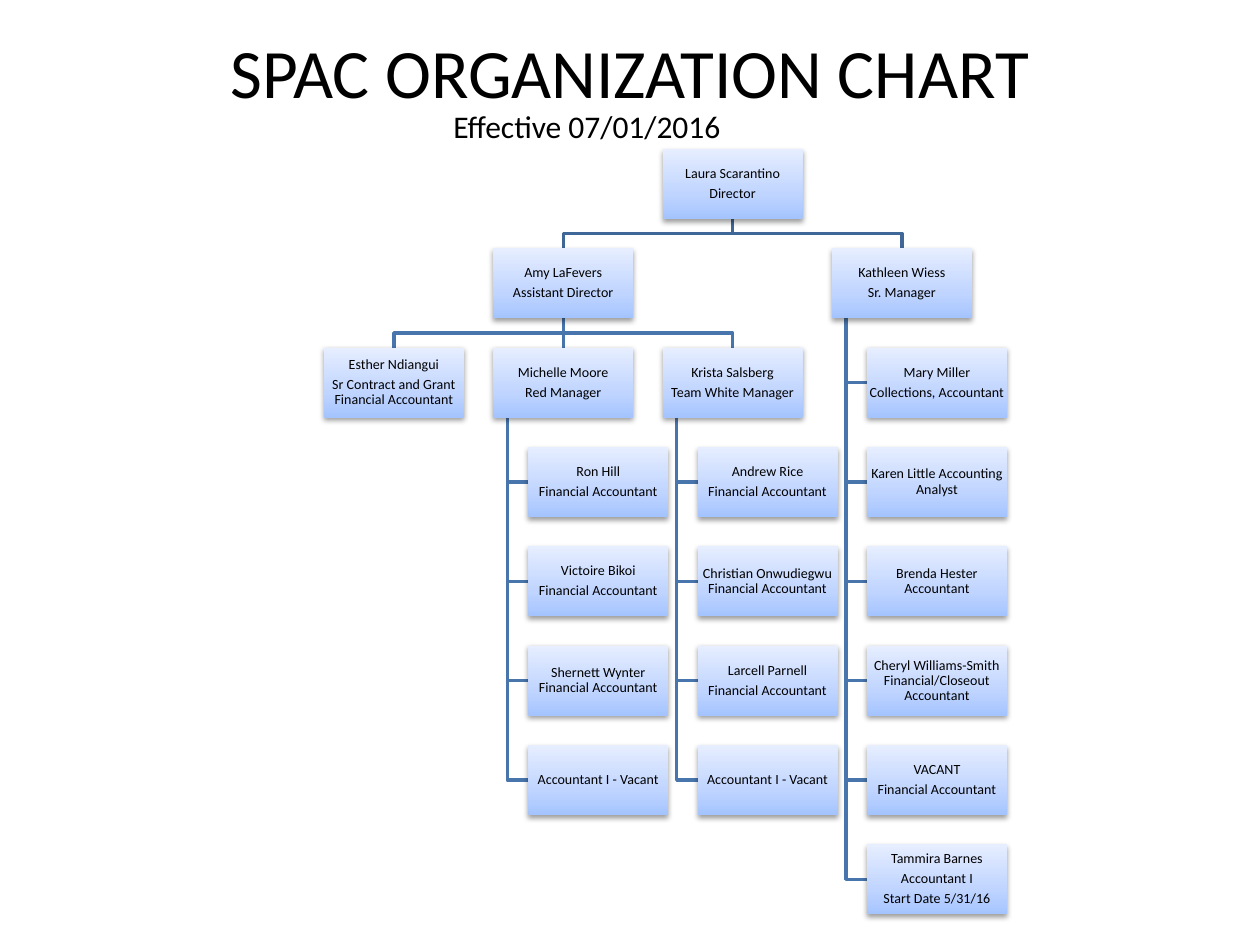
from lxml.etree import SubElement
from pptx import Presentation
from pptx.dml.color import RGBColor
from pptx.enum.shapes import MSO_SHAPE, MSO_CONNECTOR
from pptx.enum.text import MSO_ANCHOR, MSO_AUTO_SIZE, PP_ALIGN
from pptx.oxml.ns import qn
from pptx.util import Pt

PX = 914400 / 378  # EMU in one px
PAGE_W, PAGE_H = 3780, 2835
BOX_W, BOX_H = 420, 210
COLUMN_STEP, ROW_STEP = 508, 298
CHART_LEFT, CHART_TOP = 972, 447
SPINE, INDENT = BOX_W // 10, BOX_W // 4
GAP = ROW_STEP - BOX_H

FONT = "Calibri"
BLACK = RGBColor(0x00, 0x00, 0x00)
TOP_LINE = RGBColor(0x3F, 0x67, 0x97)
LINE = RGBColor(0x48, 0x75, 0xAC)
GRADIENT = [(0, RGBColor(0xA4, 0xC4, 0xFF)),
            (35, RGBColor(0xBF, 0xD4, 0xFF)),
            (100, RGBColor(0xE6, 0xEE, 0xFF))]

DIRECTOR = ["Laura Scarantino", "Director"]
ASSISTANT = ["Amy LaFevers", "Assistant Director"]
SENIOR = ["Kathleen Wiess", "Sr. Manager"]
GRANTS = ["Esther Ndiangui", "Sr Contract and Grant Financial Accountant"]
RED = ["Michelle Moore", "Red Manager"]
WHITE = ["Krista Salsberg", "Team White Manager"]
RED_STAFF = [
    ["Ron Hill", "Financial Accountant"],
    ["Victoire Bikoi", "Financial Accountant"],
    ["Shernett Wynter Financial Accountant"],
    ["Accountant I - Vacant"],
]
WHITE_STAFF = [
    ["Andrew Rice", "Financial Accountant"],
    ["Christian Onwudiegwu Financial Accountant"],
    ["Larcell Parnell", "Financial Accountant"],
    ["Accountant I - Vacant"],
]
SENIOR_STAFF = [
    ["Mary Miller", "Collections, Accountant"],
    ["Karen Little Accounting Analyst"],
    ["Brenda Hester Accountant"],
    ["Cheryl Williams-Smith Financial/Closeout Accountant"],
    ["VACANT", "Financial Accountant"],
    ["Tammira Barnes", "Accountant I", "Start Date 5/31/16"],
]


def emu(*lengths):
    return [round(length * PX) for length in lengths]


def place(shape, *box):
    shape.left, shape.top, shape.width, shape.height = emu(*box)


def style(para, size, align):
    para.alignment = align
    para.font.name, para.font.size = FONT, Pt(size)
    para.font.color.rgb = BLACK


def add_heading(page):
    title = page.shapes.title
    place(title, 189, 113, 3402, 200)
    frame = title.text_frame
    frame.auto_size = MSO_AUTO_SIZE.NONE
    frame.vertical_anchor = MSO_ANCHOR.MIDDLE
    frame.text = "SPAC ORGANIZATION CHART"
    style(frame.paragraphs[0], 39.6, PP_ALIGN.CENTER)

    date = page.shapes.add_textbox(*emu(1323, 302, 1164, 151)).text_frame
    date.word_wrap = True
    date.text = "Effective 07/01/2016"
    style(date.paragraphs[0], 18, PP_ALIGN.LEFT)


def add_gradient_and_shadow(box):
    props = box._element.spPr
    fill = SubElement(props, qn("a:gradFill"), rotWithShape="1")
    stops = SubElement(fill, qn("a:gsLst"))
    for percent, color in GRADIENT:
        stop = SubElement(stops, qn("a:gs"), pos=str(percent * 1000))
        SubElement(stop, qn("a:srgbClr"), val=str(color))
    SubElement(fill, qn("a:lin"), ang="16200000", scaled="0")
    box.line.fill.background()
    effects = SubElement(props, qn("a:effectLst"))
    shadow = SubElement(effects, qn("a:outerShdw"), blurRad="40000",
                        dist="20000", dir="5400000", rotWithShape="0")
    color = SubElement(shadow, qn("a:srgbClr"), val=str(BLACK))
    SubElement(color, qn("a:alpha"), val="38000")


def add_person(page, left, top, lines):
    box = page.shapes.add_shape(MSO_SHAPE.RECTANGLE,
                                *emu(left, top, BOX_W, BOX_H))
    add_gradient_and_shadow(box)
    frame = box.text_frame
    frame.word_wrap = True
    frame.vertical_anchor = MSO_ANCHOR.MIDDLE
    frame.margin_left, frame.margin_top, frame.margin_right, frame.margin_bottom = emu(4, 4, 4, 4)
    frame.text = "\n".join(lines)
    for para in frame.paragraphs:
        style(para, 8, PP_ALIGN.CENTER)
        para.line_spacing = 0.9
        para.space_after = Pt(2.8)


def add_elbow(page, color, start, *corners):
    builder = page.shapes.build_freeform(*start, scale=PX)
    builder.add_line_segments(corners, close=False)
    elbow = builder.convert_to_shape()
    elbow.fill.background()
    elbow.shadow.inherit = False
    elbow.line.color.rgb, elbow.line.width = color, Pt(2)


def add_drop(page, color, x, top, bottom):
    drop = page.shapes.add_connector(MSO_CONNECTOR.STRAIGHT,
                                     *emu(x, top, x, bottom))
    drop.line.color.rgb, drop.line.width = color, Pt(2)
    SubElement(drop._element.spPr, qn("a:effectLst"))


def cell(column, row):
    return CHART_LEFT + column * COLUMN_STEP, CHART_TOP + row * ROW_STEP


def add_branch(page, column, row, lines, child_columns, color):
    """Place a person with lines down to the boxes in the next row."""
    left, top = cell(column, row)
    middle, bottom = left + BOX_W // 2, top + BOX_H
    for child_column in child_columns:
        child = cell(child_column, row + 1)[0] + BOX_W // 2
        if child == middle:
            add_drop(page, color, middle, bottom, bottom + GAP)
        else:
            bar = bottom + GAP // 2
            add_elbow(page, color, (middle, bottom), (middle, bar),
                      (child, bar), (child, bottom + GAP))
    add_person(page, left, top, lines)


def add_team(page, column, row, leader, staff):
    """Place a leader with the staff hanging from a spine below."""
    left, top = cell(column, row)
    spine, indent = left + SPINE, left + INDENT
    tops = [top + ROW_STEP * step for step in range(1, len(staff) + 1)]
    for staff_top in tops:
        middle = staff_top + BOX_H // 2
        add_elbow(page, LINE, (spine, top + BOX_H), (spine, middle),
                  (indent, middle))
    add_person(page, left, top, leader)
    for staff_top, lines in zip(tops, staff):
        add_person(page, indent, staff_top, lines)


def main():
    deck = Presentation()
    deck.slide_width, deck.slide_height = emu(PAGE_W, PAGE_H)
    page = deck.slides.add_slide(deck.slide_layouts.get_by_name("Title Only"))
    add_heading(page)
    add_branch(page, 2, 0, DIRECTOR, [3, 1], TOP_LINE)
    add_branch(page, 1, 1, ASSISTANT, [2, 1, 0], LINE)
    add_person(page, *cell(0, 2), GRANTS)
    add_team(page, 1, 2, RED, RED_STAFF)
    add_team(page, 2, 2, WHITE, WHITE_STAFF)
    add_team(page, 3, 1, SENIOR, SENIOR_STAFF)
    deck.save("out.pptx")


if __name__ == "__main__":
    main()
